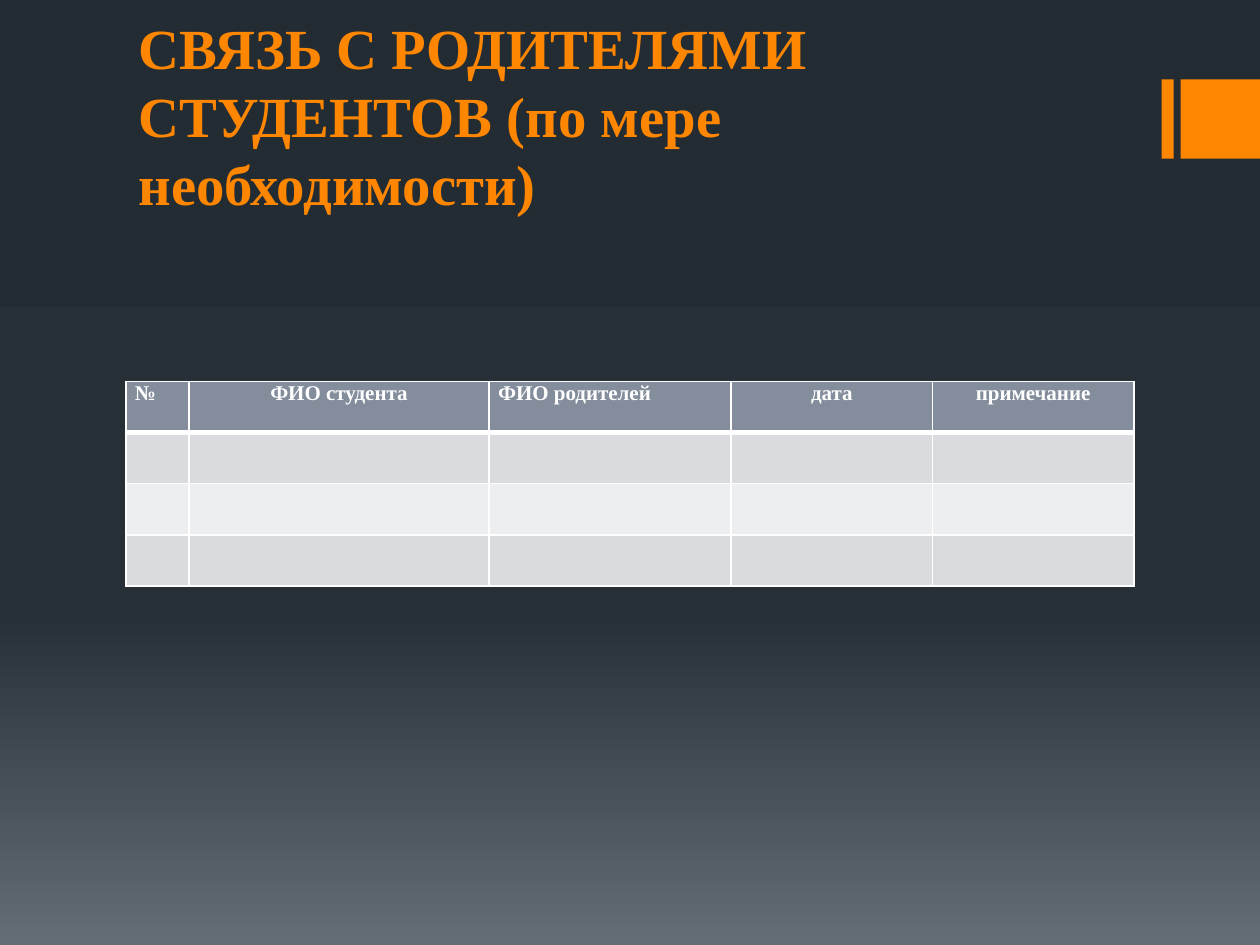
from typing import NamedTuple

from copy import deepcopy
from lxml import etree
from pptx import Presentation
from pptx.dml.color import RGBColor
from pptx.enum.shapes import MSO_SHAPE
from pptx.enum.text import MSO_ANCHOR, MSO_AUTO_SIZE, PP_ALIGN
from pptx.oxml.ns import qn
from pptx.util import Cm, Pt

RECT = MSO_SHAPE.RECTANGLE
BOTTOM = MSO_ANCHOR.BOTTOM
NO_FIT = MSO_AUTO_SIZE.NONE
LEFT = PP_ALIGN.LEFT
CENTER = PP_ALIGN.CENTER
FONT = "Times New Roman"
HEX = {
    "accent": "FF8600",
    "white": "FFFFFF",
    "head": "838D9B",
    "odd": "D9DBDE",
    "even": "EDEEEF",
}
STOPS = [(0, "242C33"), (0.65, "273037"), (1, "636D76")]


class Bar(NamedTuple):
    left: float
    width: float


class Field(NamedTuple):
    name: str
    width: float
    align: PP_ALIGN


BARS = [Bar(23.42, 0.24), Bar(23.8, 1.6)]
FIELDS = [
    Field("№", 1.27, LEFT),
    Field("ФИО студента", 6.05, CENTER),
    Field("ФИО родителей", 4.88, LEFT),
    Field("дата", 4.06, CENTER),
    Field("примечание", 4.06, CENTER),
]
ROWS = ["head", "odd", "even", "odd"]


def paint(slide) -> None:
    fill = slide.background.fill
    fill.gradient()
    fill.gradient_angle = 270
    last = list(slide.element.iter(qn("a:gs")))[-1]
    last.addnext(deepcopy(last))
    for stop, (pos, tone) in zip(fill.gradient_stops, STOPS):
        stop.position = pos
        stop.color.rgb = RGBColor.from_string(tone)


def style(par, size: float, tone: str) -> None:
    for run in par.runs:
        run.font.name = FONT
        run.font.size = Pt(size)
        run.font.bold = True
        run.font.color.rgb = RGBColor.from_string(HEX[tone])


def draw_bar(slide, bar: Bar) -> None:
    shape = slide.shapes.add_shape(RECT, Cm(bar.left), Cm(1.6), Cm(bar.width), Cm(1.6))
    shape.shadow.inherit = False
    shape.fill.solid()
    shape.fill.fore_color.rgb = RGBColor.from_string(HEX["accent"])
    shape.line.fill.background()


def draw_title(slide, text: str) -> None:
    title = slide.shapes.title
    title.left, title.top = Cm(2.54), Cm(4.29)
    title.width, title.height = Cm(20.32), Cm(3.2)
    frame = title.text_frame
    frame.text = text
    frame.word_wrap = True
    frame.auto_size = NO_FIT
    frame.vertical_anchor = BOTTOM
    frame.margin_left = frame.margin_right = Cm(0.25)
    frame.margin_top, frame.margin_bottom = 0, Cm(3.12)
    par = frame.paragraphs[0]
    par.alignment = LEFT
    par.line_spacing = Pt(38.9)
    style(par, 32.4, "accent")


def edge(cell, base: float) -> None:
    props = cell._tc.get_or_add_tcPr()
    for spot, side in enumerate("LRTB"):
        line = etree.Element(qn(f"a:ln{side}"), w=str(Pt(base if side == "B" else 1)))
        fill = etree.SubElement(line, qn("a:solidFill"))
        etree.SubElement(fill, qn("a:srgbClr"), val=HEX["white"])
        props.insert(spot, line)


def draw_table(slide) -> None:
    frame = slide.shapes.add_table(
        len(ROWS), len(FIELDS), Cm(2.54), Cm(7.69), Cm(20.32), Cm(4.12)
    )
    table = frame.table
    for col, field in zip(table.columns, FIELDS):
        col.width = Cm(field.width)
    for row, tone in zip(table.rows, ROWS):
        row.height = Cm(1.03)
        for cell, field in zip(row.cells, FIELDS):
            cell.margin_left = cell.margin_right = Cm(0.18)
            cell.margin_top = cell.margin_bottom = 0
            cell.fill.solid()
            cell.fill.fore_color.rgb = RGBColor.from_string(HEX[tone])
            edge(cell, 3 if tone == "head" else 1)
            if tone == "head":
                cell.text_frame.text = field.name
                par = cell.text_frame.paragraphs[0]
                par.alignment = field.align
                style(par, 12, "white")


def main() -> None:
    deck = Presentation()
    deck.slide_width, deck.slide_height = Cm(25.4), Cm(19.05)
    slide = deck.slides.add_slide(deck.slide_layouts[5])
    paint(slide)
    for bar in BARS:
        draw_bar(slide, bar)
    draw_title(slide, "СВЯЗЬ С РОДИТЕЛЯМИ СТУДЕНТОВ (по мере необходимости)")
    draw_table(slide)
    deck.save("out.pptx")


if __name__ == "__main__":
    main()
